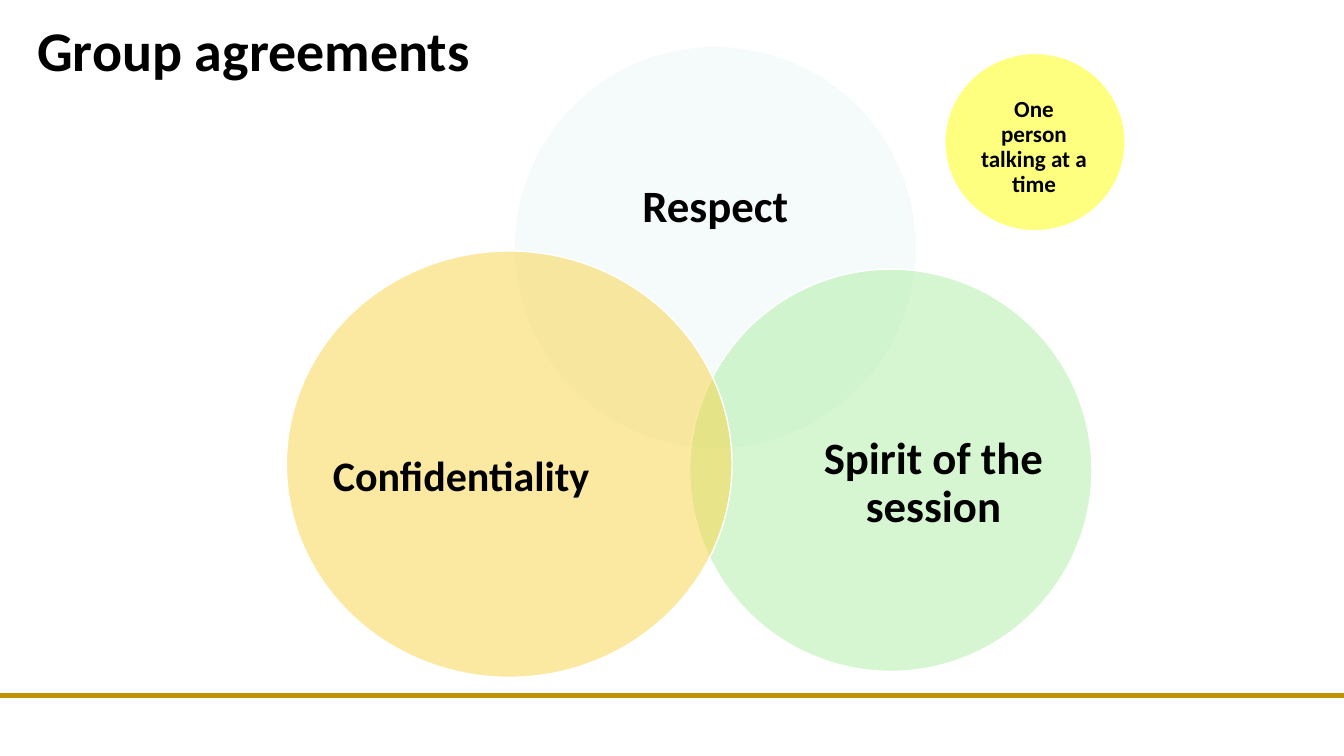
from dataclasses import dataclass

from lxml import etree
from pptx import Presentation
from pptx.dml.color import RGBColor
from pptx.enum.shapes import MSO_CONNECTOR, MSO_SHAPE
from pptx.enum.text import MSO_ANCHOR, MSO_AUTO_SIZE, PP_ALIGN
from pptx.oxml.ns import qn
from pptx.slide import Slide
from pptx.text.text import TextFrame
from pptx.util import Inches, Pt

ELLIPSE = MSO_SHAPE.OVAL
STRAIGHT = MSO_CONNECTOR.STRAIGHT
MIDDLE = MSO_ANCHOR.MIDDLE
NO_AUTOFIT = MSO_AUTO_SIZE.NONE
LEFT, CENTER = PP_ALIGN.LEFT, PP_ALIGN.CENTER

Box = tuple[float, float, float, float]  # left, top, width, height in inches


@dataclass(frozen=True)
class Theme:
    font: str = "Calibri"
    ink: str = "000000"
    outline: str = "FFFFFF"
    rule: str = "C09102"
    respect: str = "ECF8F7"
    spirit: str = "ADEFA2"
    confidentiality: str = "F9D444"
    talking: str = "FFFF00"
    title_size: float = 40
    large_size: float = 32
    medium_size: float = 30
    small_size: float = 16.5
    opacity: int = 50
    line_spacing: float = 0.9


@dataclass(frozen=True)
class Agreement:
    text: str
    circle: Box
    label: Box
    color: str
    size: float


THEME = Theme()
SLIDE_WIDTH, SLIDE_HEIGHT = 13.33, 7.5
RULE_TOP = 6.9
TITLE_BOX: Box = (0.27, 0.06, 5.27, 0.94)

# Listed from back to front
AGREEMENTS = [
    Agreement("Respect", (5.1, 0.46, 3.99, 3.99), (5.63, 1.16, 2.93, 1.8),
              THEME.respect, THEME.large_size),
    Agreement("Spirit of the session", (6.84, 2.67, 3.99, 3.99), (8.06, 3.7, 2.4, 2.2),
              THEME.spirit, THEME.large_size),
    Agreement("Confidentiality", (2.84, 2.49, 4.42, 4.23), (3.25, 3.58, 2.65, 2.32),
              THEME.confidentiality, THEME.medium_size),
    Agreement("One person talking at a time", (9.37, 0.53, 1.79, 1.76), (9.72, 0.98, 1.07, 0.97),
              THEME.talking, THEME.small_size),
]


def set_text(frame: TextFrame, text: str, size: float, alignment: PP_ALIGN) -> None:
    frame.text = text
    paragraph = frame.paragraphs[0]
    font = paragraph.runs[0].font
    formats = {
        frame: {"word_wrap": True, "auto_size": NO_AUTOFIT, "vertical_anchor": MIDDLE},
        paragraph: {"alignment": alignment, "line_spacing": THEME.line_spacing},
        font: {"name": THEME.font, "size": Pt(size), "bold": True},
    }
    for target, values in formats.items():
        for attribute, value in values.items():
            setattr(target, attribute, value)
    font.color.rgb = RGBColor.from_string(THEME.ink)


def add_title(slide: Slide, text: str) -> None:
    title = slide.shapes.title
    for side, value in zip(("left", "top", "width", "height"), TITLE_BOX):
        setattr(title, side, Inches(value))
    set_text(title.text_frame, text, THEME.title_size, LEFT)


def add_rule(slide: Slide) -> None:
    rule = slide.shapes.add_connector(
        STRAIGHT, 0, Inches(RULE_TOP), Inches(SLIDE_WIDTH), Inches(RULE_TOP))
    rule.line.color.rgb = RGBColor.from_string(THEME.rule)
    rule.line.width = Pt(3)
    etree.SubElement(rule._element.spPr, qn("a:effectLst"))


def add_agreement(slide: Slide, agreement: Agreement) -> None:
    # Translucent circle
    circle = slide.shapes.add_shape(ELLIPSE, *map(Inches, agreement.circle))
    circle.shadow.inherit = False
    circle.fill.solid()
    circle.fill.fore_color.rgb = RGBColor.from_string(agreement.color)
    fill_color = circle._element.spPr.find(qn("a:solidFill"))[0]
    etree.SubElement(fill_color, qn("a:alpha"), val=str(THEME.opacity * 1000))
    circle.line.color.rgb = RGBColor.from_string(THEME.outline)
    circle.line.width = Pt(1)

    # Label placed clear of the overlaps
    label = slide.shapes.add_textbox(*map(Inches, agreement.label)).text_frame
    for side in ("left", "top", "right", "bottom"):
        setattr(label, f"margin_{side}", 0)
    set_text(label, agreement.text, agreement.size, CENTER)


def main() -> None:
    presentation = Presentation()
    presentation.slide_width = Inches(SLIDE_WIDTH)
    presentation.slide_height = Inches(SLIDE_HEIGHT)
    slide = presentation.slides.add_slide(presentation.slide_layouts[5])  # title only

    add_rule(slide)
    add_title(slide, "Group agreements")
    for agreement in AGREEMENTS:
        add_agreement(slide, agreement)

    presentation.save("out.pptx")


if __name__ == "__main__":
    main()
